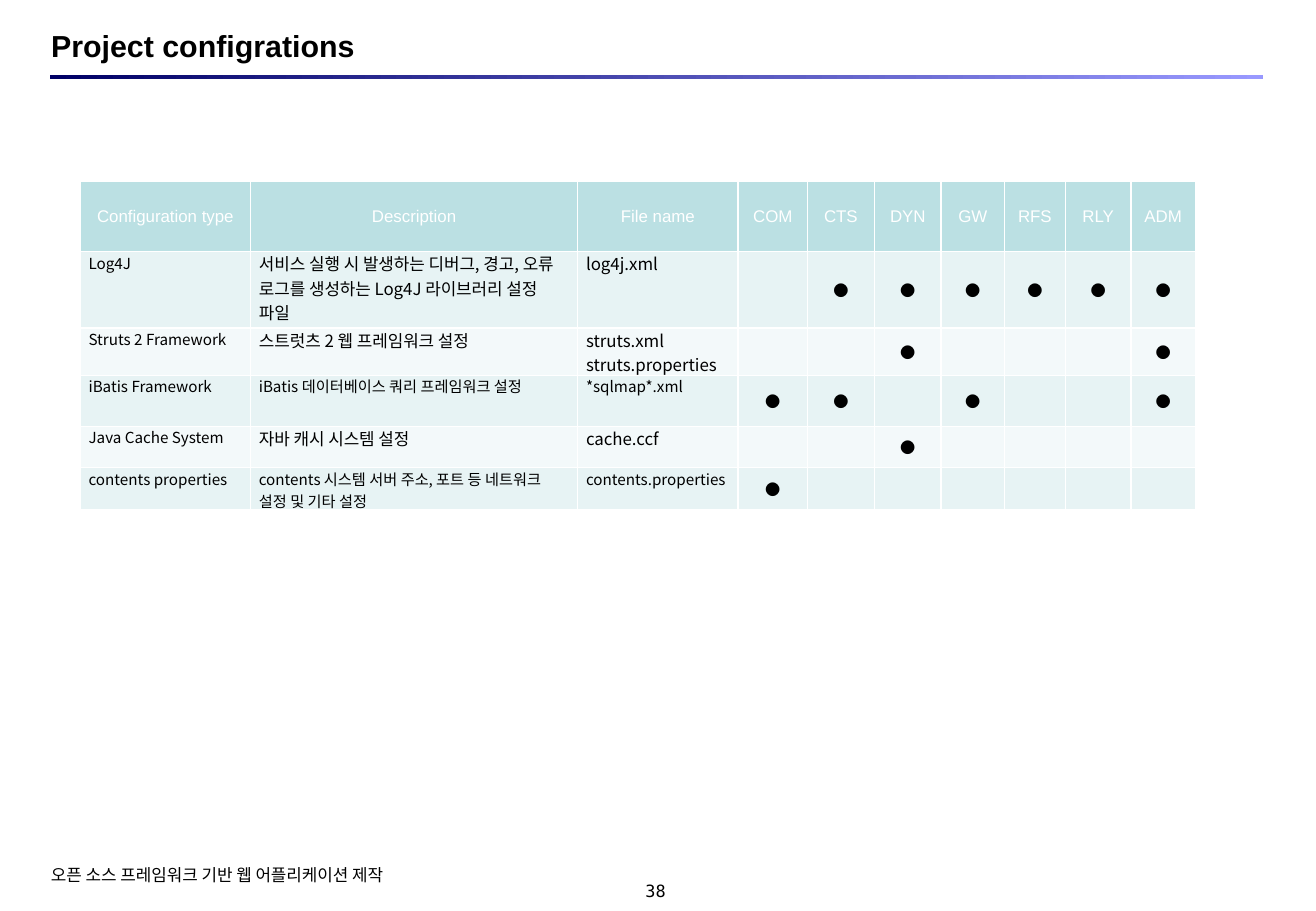
from lxml.etree import SubElement
from pptx import Presentation
from pptx.dml.color import RGBColor
from pptx.enum.shapes import MSO_SHAPE as Shape
from pptx.enum.text import MSO_ANCHOR as Anchor, PP_ALIGN as Align
from pptx.oxml import parse_xml
from pptx.oxml.ns import nsdecls, qn
from pptx.util import Inches, Pt

WIDTH, HEIGHT = Inches(10.83), Inches(7.5)
BLACK = RGBColor(0x00, 0x00, 0x00)
WHITE = RGBColor(0xFF, 0xFF, 0xFF)
NAVY = RGBColor(0x00, 0x00, 0x66)
LAVENDER = RGBColor(0x99, 0x99, 0xFF)
HEADER_TEAL = RGBColor(0xBB, 0xE0, 0xE3)
BANDS = RGBColor(0xE7, 0xF3, 0xF4), RGBColor(0xF3, 0xF9, 0xFA)
SANS, KOREAN, MONO = "Arial", "Noto Sans CJK KR", "DejaVu Sans Mono"

MODULES = ["COM", "CTS", "DYN", "GW", "RFS", "RLY", "ADM"]
HEADINGS = ["Configuration type", "Description", "File name", *MODULES]
COLUMN_WEIGHTS = [1.4, 2.69, 1.32, 0.57, 0.55, 0.55, 0.52, 0.5, 0.54, 0.53]
ROW_WEIGHTS = [0.58, 0.63, 0.39, 0.42, 0.34, 0.35]
CONFIGURATIONS = [
    ("Log4J", "서비스 실행 시 발생하는 디버그, 경고, 오류 로그를 생성하는 Log4J 라이브러리 설정 파일",
     "log4j.xml", 10, {"CTS", "DYN", "GW", "RFS", "RLY", "ADM"}),
    ("Struts 2 Framework", "스트럿츠 2 웹 프레임워크 설정",
     "struts.xml\nstruts.properties", 10, {"DYN", "ADM"}),
    ("iBatis Framework", "iBatis 데이터베이스 쿼리 프레임워크 설정",
     "*sqlmap*.xml", 9, {"COM", "CTS", "GW", "ADM"}),
    ("Java Cache System", "자바 캐시 시스템 설정", "cache.ccf", 10, {"DYN"}),
    ("contents properties", "contents 시스템 서버 주소, 포트 등 네트워크 설정 및 기타 설정",
     "contents.properties", 9, {"COM"}),
]


def area(left, top, width, height):
    """Turn percentages of the slide into a position and size."""
    return (int(WIDTH * left / 100), int(HEIGHT * top / 100),
            int(WIDTH * width / 100), int(HEIGHT * height / 100))


def write(frame, text, size, font=KOREAN, color=BLACK, align=Align.LEFT, bold=False):
    """Fill a text frame and format all its runs alike."""
    frame.text = text
    for paragraph in frame.paragraphs:
        paragraph.alignment = align
        paragraph.space_before = Pt(0)
        for run in paragraph.runs:
            run.font.size, run.font.bold = Pt(size), bold
            run.font.name, run.font.color.rgb = font, color
            SubElement(run.font._element, qn("a:ea"), typeface=KOREAN)


def set_margins(holder, side, end):
    """Set equal side margins and equal top and bottom margins."""
    holder.margin_left = holder.margin_right = Inches(side)
    holder.margin_top = holder.margin_bottom = Inches(end)


def add_title(slide, text):
    """Place and format the slide title."""
    title = slide.shapes.title
    title.left, title.top, title.width, title.height = area(3.88, 2.93, 92.06, 4)
    set_margins(title.text_frame, 0, 0)
    title.text_frame.vertical_anchor = Anchor.MIDDLE
    write(title.text_frame, text, 18, SANS, bold=True)


def add_rule(slide):
    """Draw the gradient bar under the title."""
    bar = slide.shapes.add_shape(Shape.RECTANGLE, *area(3.79, 8.27, 92.15, 0.4))
    bar.shadow.inherit = False
    bar.line.fill.background()
    bar.fill.gradient()
    bar.fill.gradient_angle = 0
    for stop, color in zip(bar.fill.gradient_stops, (NAVY, LAVENDER)):
        stop.color.rgb = color


def add_note(slide, place, text, margins, anchor, **style):
    """Add a line of text at the foot of the slide."""
    frame = slide.shapes.add_textbox(*place).text_frame
    frame.word_wrap = True
    frame.vertical_anchor = anchor
    set_margins(frame, *margins)
    write(frame, text, 10, **style)


def style_cell(cell, fill):
    """Give a cell its fill and thin white borders."""
    cell.fill.solid()
    cell.fill.fore_color.rgb = fill
    for position, side in enumerate(("lnL", "lnR", "lnT", "lnB")):
        border = parse_xml(
            f'<a:{side} {nsdecls("a")} w="{Pt(1)}"><a:solidFill>'
            f'<a:srgbClr val="{WHITE}"/></a:solidFill></a:{side}>')
        cell._tc.get_or_add_tcPr().insert(position, border)


def add_configuration_table(slide):
    """Build the table of configuration files and the modules using them."""
    place = area(6.09, 19.87, 84.76, 36.13)
    table = slide.shapes.add_table(
        len(ROW_WEIGHTS), len(COLUMN_WEIGHTS), *place).table
    for column, weight in zip(table.columns, COLUMN_WEIGHTS):
        column.width = int(place[2] * weight / sum(COLUMN_WEIGHTS))
    for row, weight in zip(table.rows, ROW_WEIGHTS):
        row.height = int(place[3] * weight / sum(ROW_WEIGHTS))

    for cell, heading in zip(table.rows[0].cells, HEADINGS):
        style_cell(cell, HEADER_TEAL)
        cell.vertical_anchor = Anchor.MIDDLE
        write(cell.text_frame, heading, 10, SANS, WHITE, Align.CENTER)

    for index, (kind, description, files, size, users) in enumerate(CONFIGURATIONS):
        cells = list(table.rows[index + 1].cells)
        for cell in cells:
            style_cell(cell, BANDS[index % 2])
            set_margins(cell, 0.07, 0)
        write(cells[0].text_frame, kind, 9, align=Align.JUSTIFY)
        write(cells[1].text_frame, description, size)
        write(cells[2].text_frame, files, size)
        for cell, module in zip(cells[3:], MODULES):
            if module in users:
                cell.vertical_anchor = Anchor.MIDDLE
                write(cell.text_frame, "●", 9, align=Align.CENTER)


def main():
    """Build the slide and save it."""
    deck = Presentation()
    deck.slide_width, deck.slide_height = WIDTH, HEIGHT
    slide = deck.slides.add_slide(deck.slide_layouts[5])
    add_note(slide, area(46.72, 96.67, 6.19, 2.27), "38", (0, 0),
             Anchor.MIDDLE, font=MONO, align=Align.CENTER)
    add_rule(slide)
    add_note(slide, area(3.69, 94.8, 28.53, 2.53),
             "오픈 소스 프레임워크 기반 웹 어플리케이션 제작", (0.02, 0.01),
             Anchor.TOP, font=SANS)
    add_title(slide, "Project configrations")
    add_configuration_table(slide)
    deck.save("out.pptx")


if __name__ == "__main__":
    main()
